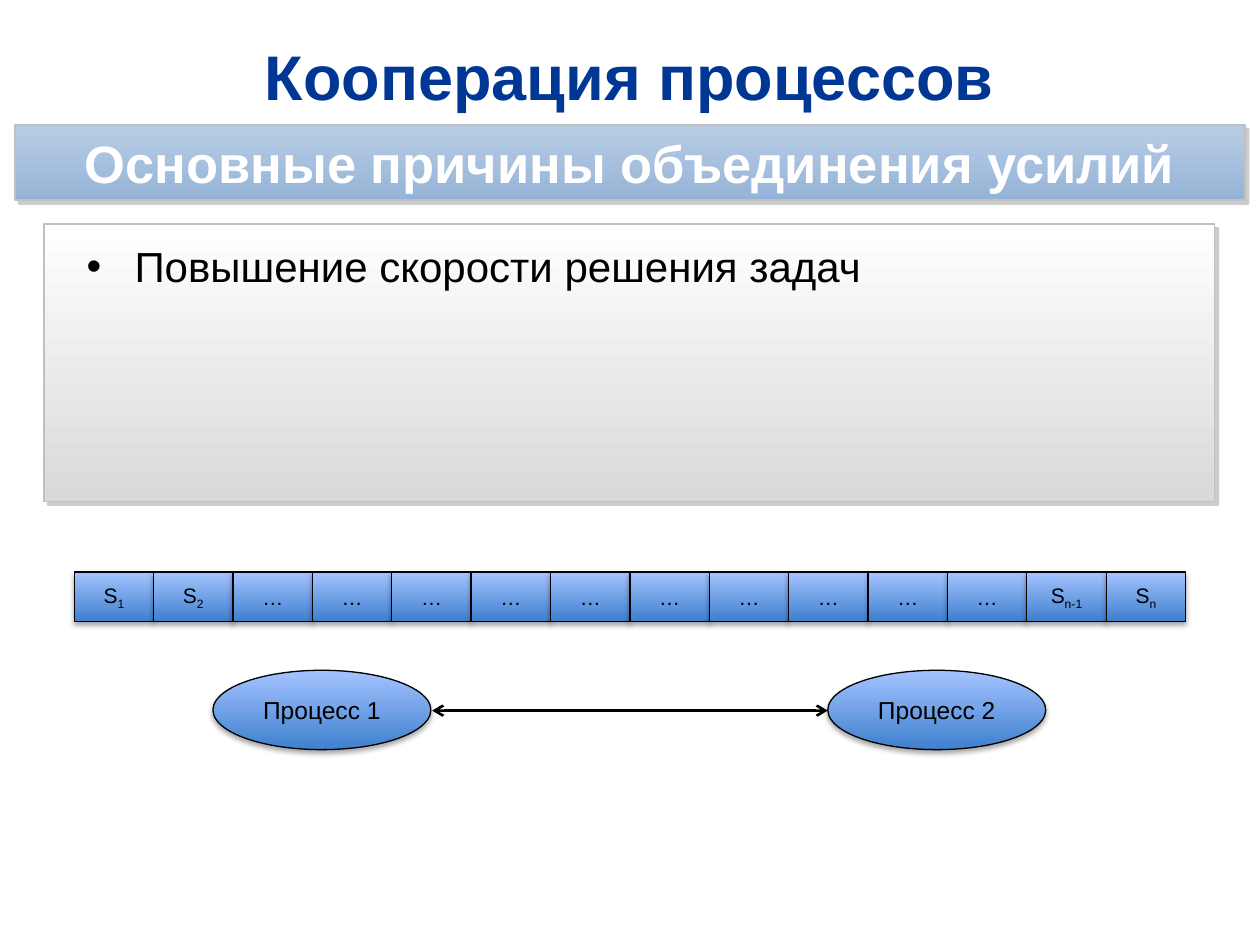
"""Build the slide on process cooperation."""
from dataclasses import dataclass

from lxml.etree import SubElement
from pptx import Presentation
from pptx.dml.color import RGBColor
from pptx.enum.shapes import MSO_CONNECTOR, MSO_SHAPE
from pptx.enum.text import MSO_ANCHOR, MSO_AUTO_SIZE, PP_ALIGN
from pptx.oxml.ns import qn
from pptx.util import Inches, Pt

NAVY = RGBColor(0x00, 0x37, 0x94)
WHITE = RGBColor(0xFF, 0xFF, 0xFF)
BLACK = RGBColor(0x00, 0x00, 0x00)
SILVER = RGBColor(0xC0, 0xC0, 0xC0)
GRAY = RGBColor(0x80, 0x80, 0x80)
PALE_GRAY = RGBColor(0xD9, 0xD9, 0xD9)
BANNER_TOP = RGBColor(0xB9, 0xCD, 0xE5)
BANNER_BOTTOM = RGBColor(0x95, 0xB3, 0xD7)
BLUE = RGBColor(0x3F, 0x80, 0xCE)
LIGHT_BLUE = RGBColor(0xA4, 0xC4, 0xFF)


@dataclass(frozen=True)
class Shadow:
    color: RGBColor
    alpha: int
    blur: float
    dist: float
    angle: int


@dataclass(frozen=True)
class Style:
    stops: tuple[RGBColor, RGBColor]
    angle: int
    line: RGBColor
    width: float
    shadow: Shadow


@dataclass(frozen=True)
class Box:
    left: float
    top: float
    width: float
    height: float

    def emu(self) -> tuple:
        return tuple(Inches(v) for v in (self.left, self.top, self.width, self.height))


PANEL_SHADOW = Shadow(GRAY, 40, 0, 3, 45)
BANNER = Style((BANNER_TOP, BANNER_BOTTOM), 270, SILVER, 1, PANEL_SHADOW)
PANEL = Style((WHITE, PALE_GRAY), 270, SILVER, 1, PANEL_SHADOW)
BLOCK = Style((BLUE, LIGHT_BLUE), 90, BLACK, 0.75, Shadow(BLACK, 35, 3.1, 1.8, 90))

CELLS = [("S", "1"), ("S", "2")] + [("…", "")] * 10 + [("S", "n-1"), ("S", "n")]
CELL_WIDTH = 0.63
PROCESSES = [("Процесс 1", 1.69), ("Процесс 2", 6.57)]


def format_text(tf, size: float, color: RGBColor, bold: bool = False,
                align: PP_ALIGN = PP_ALIGN.CENTER) -> None:
    for p in tf.paragraphs:
        p.alignment = align
        for r in p.runs:
            r.font.name = "Arial"
            r.font.size = Pt(size)
            r.font.bold = bold
            r.font.color.rgb = color


def add_shadow(sp, shadow: Shadow) -> None:
    sp.shadow.inherit = False
    effects = sp._element.spPr.find(qn("a:effectLst"))
    outer = SubElement(effects, qn("a:outerShdw"), blurRad=str(Pt(shadow.blur)),
                       dist=str(Pt(shadow.dist)), dir=str(shadow.angle * 60000),
                       algn="ctr", rotWithShape="0")
    color = SubElement(outer, qn("a:srgbClr"), val=str(shadow.color))
    SubElement(color, qn("a:alpha"), val=str(shadow.alpha * 1000))


def add_block(s, kind: MSO_SHAPE, box: Box, style: Style, text: str = "",
              sub: str = "", size: float = 12, color: RGBColor = BLACK,
              bold: bool = False):
    sp = s.shapes.add_shape(kind, *box.emu())
    sp.fill.gradient()
    sp.fill.gradient_angle = style.angle
    for stop, rgb in zip(sp.fill.gradient_stops, style.stops):
        stop.color.rgb = rgb
    sp.line.color.rgb = style.line
    sp.line.width = Pt(style.width)
    add_shadow(sp, style.shadow)
    tf = sp.text_frame
    tf.vertical_anchor = MSO_ANCHOR.MIDDLE
    tf.text = text
    if sub:
        r = tf.paragraphs[0].add_run()
        r.text = sub
        r._r.get_or_add_rPr().set("baseline", "-25000")
    format_text(tf, size, color, bold)
    return sp


def add_bullet(s, box: Box, text: str) -> None:
    tf = s.shapes.add_textbox(*box.emu()).text_frame
    tf.word_wrap = True
    tf.auto_size = MSO_AUTO_SIZE.SHAPE_TO_FIT_TEXT
    tf.text = text
    format_text(tf, 24, BLACK, align=PP_ALIGN.LEFT)
    pPr = tf.paragraphs[0]._p.get_or_add_pPr()
    indent = Inches(0.38)
    pPr.set("marL", str(indent))
    pPr.set("indent", str(-indent))
    SubElement(pPr, qn("a:buFont"), typeface="Arial")
    SubElement(pPr, qn("a:buChar"), char="•")


def add_double_arrow(s, x1: float, x2: float, y: float) -> None:
    cx = s.shapes.add_connector(MSO_CONNECTOR.STRAIGHT, Inches(x1), Inches(y),
                                Inches(x2), Inches(y))
    cx.line.color.rgb = BLACK
    cx.line.width = Pt(1.5)
    ln = cx.line._get_or_add_ln()
    for end in ("a:headEnd", "a:tailEnd"):
        SubElement(ln, qn(end), type="arrow")
    SubElement(cx._element.spPr, qn("a:effectLst"))


def main() -> None:
    prs = Presentation()
    prs.slide_width, prs.slide_height = Inches(10), Inches(7.5)
    s = prs.slides.add_slide(prs.slide_layouts[5])

    title = s.shapes.title
    title.left, title.top, title.width, title.height = Box(0.35, 0.26, 9.29, 0.68).emu()
    title.text_frame.text = "Кооперация процессов"
    title.text_frame.vertical_anchor = MSO_ANCHOR.MIDDLE
    format_text(title.text_frame, 36, NAVY, bold=True)

    banner = add_block(s, MSO_SHAPE.RECTANGLE, Box(0.12, 0.99, 9.76, 0.6), BANNER,
                       "Основные причины объединения усилий",
                       size=30, color=WHITE, bold=True)
    tf = banner.text_frame
    tf.margin_left = tf.margin_right = Inches(0.24)
    tf.margin_top = tf.margin_bottom = Inches(0.04)

    add_block(s, MSO_SHAPE.RECTANGLE, Box(0.35, 1.78, 9.29, 2.2), PANEL)
    add_bullet(s, Box(0.59, 1.86, 8.74, 0.5), "Повышение скорости решения задач")

    for i, (text, sub) in enumerate(CELLS):
        box = Box(0.59 + i * CELL_WIDTH, 4.54, CELL_WIDTH, 0.39)
        add_block(s, MSO_SHAPE.RECTANGLE, box, BLOCK, text, sub)
    for name, left in PROCESSES:
        add_block(s, MSO_SHAPE.OVAL, Box(left, 5.32, 1.73, 0.63), BLOCK, name, size=14)
    add_double_arrow(s, 3.43, 6.57, 5.64)

    prs.save("out.pptx")


if __name__ == "__main__":
    main()
